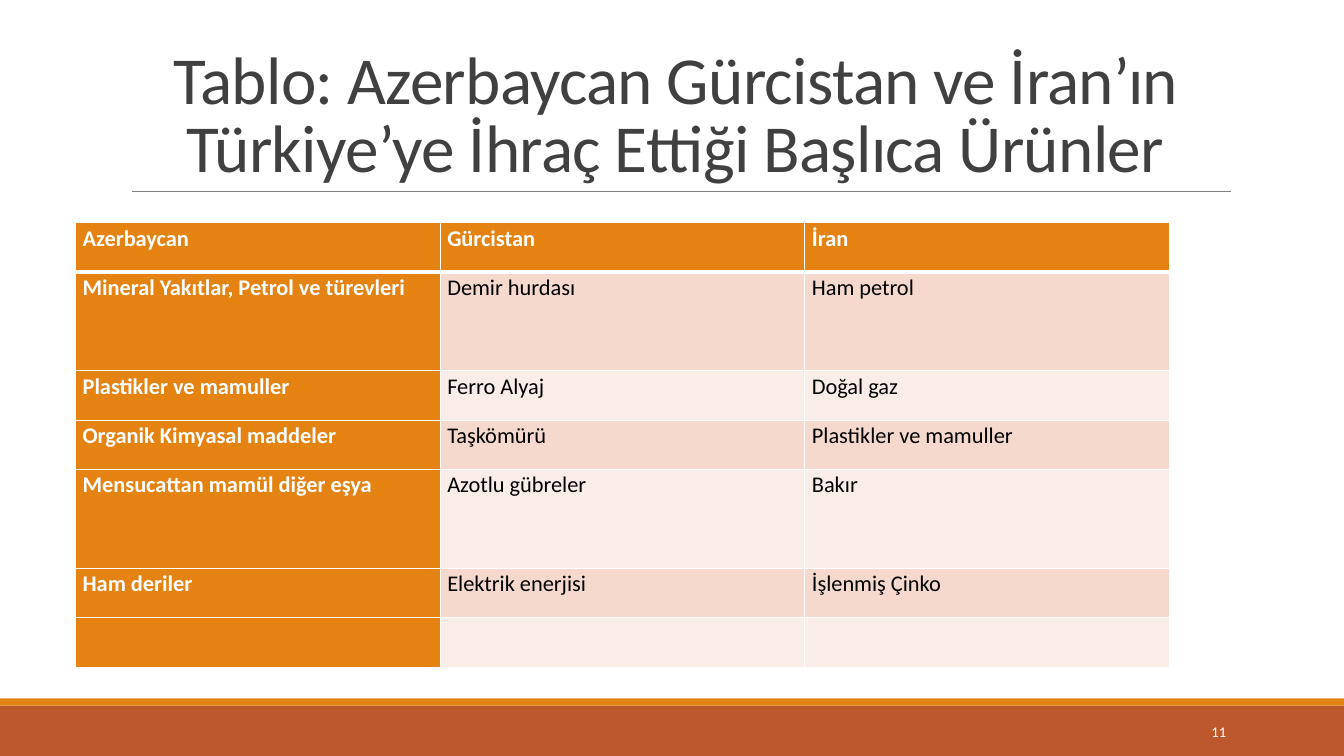
from lxml import etree
from pptx import Presentation
from pptx.dml.color import RGBColor
from pptx.enum.shapes import MSO_CONNECTOR, MSO_SHAPE
from pptx.enum.text import MSO_ANCHOR, MSO_AUTO_SIZE, PP_ALIGN
from pptx.oxml.ns import qn
from pptx.util import Inches, Pt

LEFT, CENTER, RIGHT = PP_ALIGN.LEFT, PP_ALIGN.CENTER, PP_ALIGN.RIGHT
TOP, MIDDLE, BOTTOM = MSO_ANCHOR.TOP, MSO_ANCHOR.MIDDLE, MSO_ANCHOR.BOTTOM
COLORS = {
    "rust": "BD582C", "orange": "E48312", "rule": "808080", "title": "404040",
    "white": "FFFFFF", "black": "000000", "band": "F5D9CC", "pale": "FAEDE7",
}


def rgb(name):
    return RGBColor.from_string(COLORS[name])


def write(frame, text, size, color, bold=False, align=LEFT, line_spacing=1.0, tracking=0):
    """Fill a text frame with one formatted run; tracking is in hundredths of a point."""
    frame.word_wrap = True
    paragraph = frame.paragraphs[0]
    paragraph.alignment = align
    paragraph.line_spacing = line_spacing
    run = paragraph.add_run()
    run.text = text
    run.font.name = "Calibri"
    run.font.size = Pt(size)
    run.font.bold = bold
    run.font.color.rgb = rgb(color)
    if tracking:
        run.font._element.set("spc", str(tracking))


prs = Presentation()
prs.slide_width, prs.slide_height = Inches(13.33), Inches(7.5)
slide = prs.slides.add_slide(prs.slide_layouts[5])

# Footer bands and the rule under the title
for top, height, color in [(7, 0.5, "rust"), (6.93, 0.07, "orange")]:
    band = slide.shapes.add_shape(
        MSO_SHAPE.RECTANGLE, 0, Inches(top), prs.slide_width, Inches(height))
    band.shadow.inherit = False
    band.fill.solid()
    band.fill.fore_color.rgb = rgb(color)
    band.line.fill.background()

title_rule = slide.shapes.add_connector(
    MSO_CONNECTOR.STRAIGHT, Inches(1.31), Inches(1.9), Inches(12.21), Inches(1.9))
title_rule.line.color.rgb = rgb("rule")
title_rule.line.width = Pt(0.5)
etree.SubElement(title_rule._element.spPr, qn("a:effectLst"))

title = slide.shapes.title
title.left, title.top = Inches(1.2), Inches(0.31)
title.width, title.height = Inches(11), Inches(1.59)
title.text_frame.auto_size = MSO_AUTO_SIZE.NONE
title.text_frame.vertical_anchor = BOTTOM
write(title.text_frame,
      "Tablo: Azerbaycan Gürcistan ve İran’ın Türkiye’ye İhraç Ettiği Başlıca Ürünler",
      48, "title", align=CENTER, line_spacing=0.85, tracking=-50)

# Export table: coloured header row and first column, banded body
exports = [
    ("Azerbaycan", "Gürcistan", "İran"),
    ("Mineral Yakıtlar, Petrol ve türevleri", "Demir hurdası", "Ham petrol"),
    ("Plastikler ve mamuller", "Ferro Alyaj", "Doğal gaz"),
    ("Organik Kimyasal maddeler", "Taşkömürü", "Plastikler ve mamuller"),
    ("Mensucattan mamül diğer eşya", "Azotlu gübreler", "Bakır"),
    ("Ham deriler", "Elektrik enerjisi", "İşlenmiş Çinko"),
    ("", "", ""),
]
TALL_ROWS = (1, 4)
ROW_HEIGHT = 0.49
table = slide.shapes.add_table(
    len(exports), 3, Inches(0.75), Inches(2.21), Inches(10.85), Inches(4.41)).table
for column in table.columns:
    column.width = Inches(10.85 / 3)

for r, products in enumerate(exports):
    table.rows[r].height = Inches(ROW_HEIGHT * (2 if r in TALL_ROWS else 1))
    for c, product in enumerate(products):
        cell = table.cell(r, c)
        heading = r == 0 or c == 0
        cell.margin_left = cell.margin_right = Inches(0.07)
        cell.margin_top = cell.margin_bottom = 0
        cell.vertical_anchor = TOP
        if product:
            write(cell.text_frame, product, 16, "white" if heading else "black",
                  bold=heading, line_spacing=1.07)
        for side in "LRTB":
            thick = (r, side) in [(0, "B"), (1, "T")]
            border = etree.SubElement(
                cell._tc.get_or_add_tcPr(), qn(f"a:ln{side}"), w=str(Pt(3 if thick else 1)))
            paint = etree.SubElement(border, qn("a:solidFill"))
            etree.SubElement(paint, qn("a:srgbClr"), val=COLORS["white"])
        cell.fill.solid()
        cell.fill.fore_color.rgb = rgb(
            "orange" if heading else "band" if r % 2 else "pale")

page_number = slide.shapes.add_textbox(
    Inches(10.83), Inches(7.06), Inches(1.43), Inches(0.4)).text_frame
page_number.vertical_anchor = MIDDLE
write(page_number, "11", 10.5, "white", align=RIGHT)

prs.save("out.pptx")
